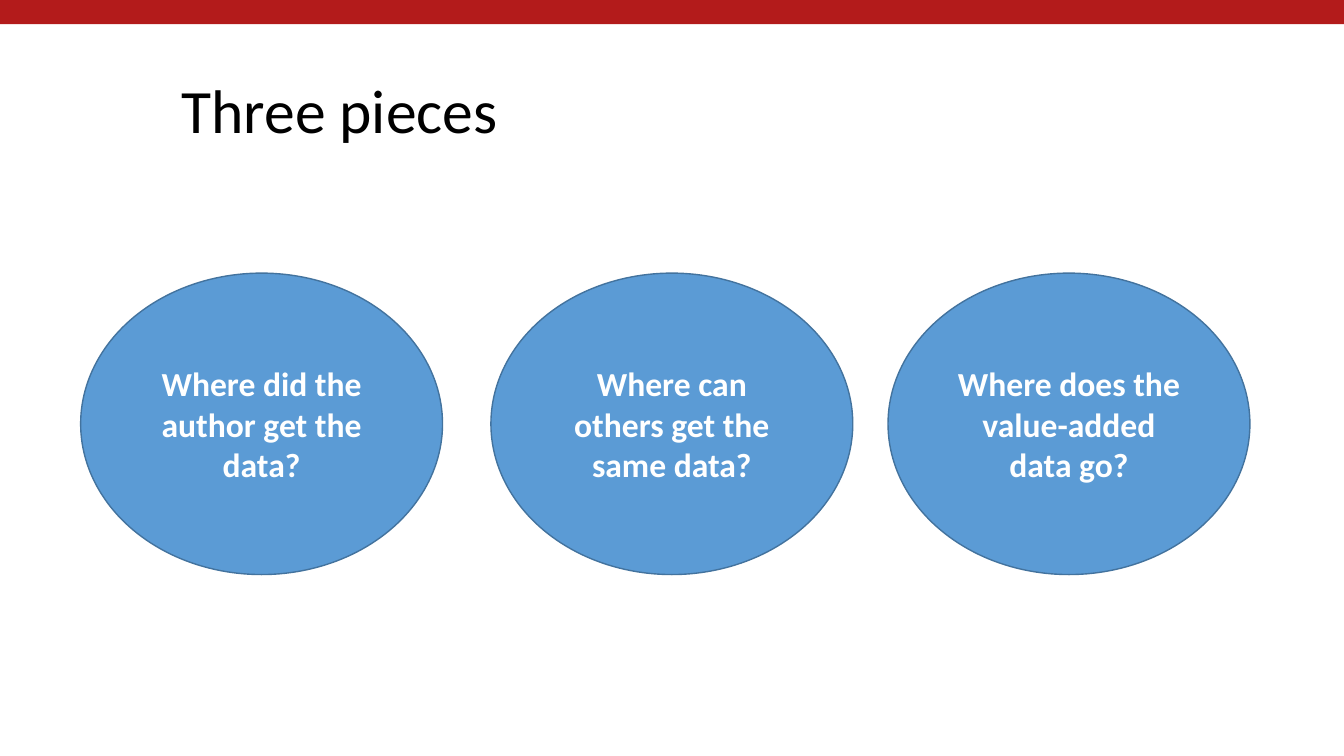
from pptx import Presentation
from pptx.dml.color import RGBColor
from pptx.enum.shapes import MSO_SHAPE as Shape
from pptx.enum.text import MSO_ANCHOR as Anchor, PP_ALIGN as Align
from pptx.util import Pt

PAGE_WIDTH, PAGE_HEIGHT = 960, 540
QUESTIONS = [
    (0, "Where did the author get the data?"),
    (293.04, "Where can others get the same data?"),
    (576.72, "Where does the value-added data go?"),
]


def color(hex_text):
    """Return the colour for a hex string."""
    return RGBColor.from_string(hex_text)


def write(shape, text, size, ink, align, bold=False):
    """Put one formatted, vertically centred paragraph into a shape."""
    frame = shape.text_frame
    frame.text = text
    frame.word_wrap = True
    frame.vertical_anchor = Anchor.MIDDLE
    para = frame.paragraphs[0]
    para.alignment = align
    font = para.runs[0].font
    font.name, font.size, font.bold = "Calibri", Pt(size), bold
    font.color.rgb = color(ink)
    return para


def add_filled(page, kind, box, fill):
    """Add a flat preset shape without an outline."""
    shape = page.shapes.add_shape(kind, *map(Pt, box))
    shape.shadow.inherit = False
    shape.fill.solid()
    shape.fill.fore_color.rgb = color(fill)
    shape.line.fill.background()
    return shape


def add_title(page, box, text):
    """Move and format the title placeholder."""
    title = page.shapes.title
    title.left, title.top, title.width, title.height = map(Pt, box)
    para = write(title, text, 44, "000000", Align.LEFT)
    para.line_spacing = 0.9


def add_questions(page, box):
    """Draw the question ellipses at their offsets within the box."""
    left, top, width, height = box
    ellipse_width = width - QUESTIONS[-1][0]
    for offset, question in QUESTIONS:
        place = (left + offset, top, ellipse_width, height)
        ellipse = add_filled(page, Shape.OVAL, place, "5B9BD5")
        ellipse.line.color.rgb = color("43739E")
        ellipse.line.width = Pt(1)
        write(ellipse, question, 24, "FFFFFF", Align.CENTER, bold=True)


def main():
    """Build and save the slide."""
    deck = Presentation()
    deck.slide_width, deck.slide_height = Pt(PAGE_WIDTH), Pt(PAGE_HEIGHT)
    page = deck.slides.add_slide(deck.slide_layouts[5])
    add_filled(page, Shape.RECTANGLE, (0, 0, PAGE_WIDTH, 17.28), "B31B1B")
    add_title(page, (122.4, 28.8, 770.4, 104.4), "Three pieces")
    add_questions(page, (57.6, 195.12, 835.2, 215.28))
    deck.save("out.pptx")


if __name__ == "__main__":
    main()
